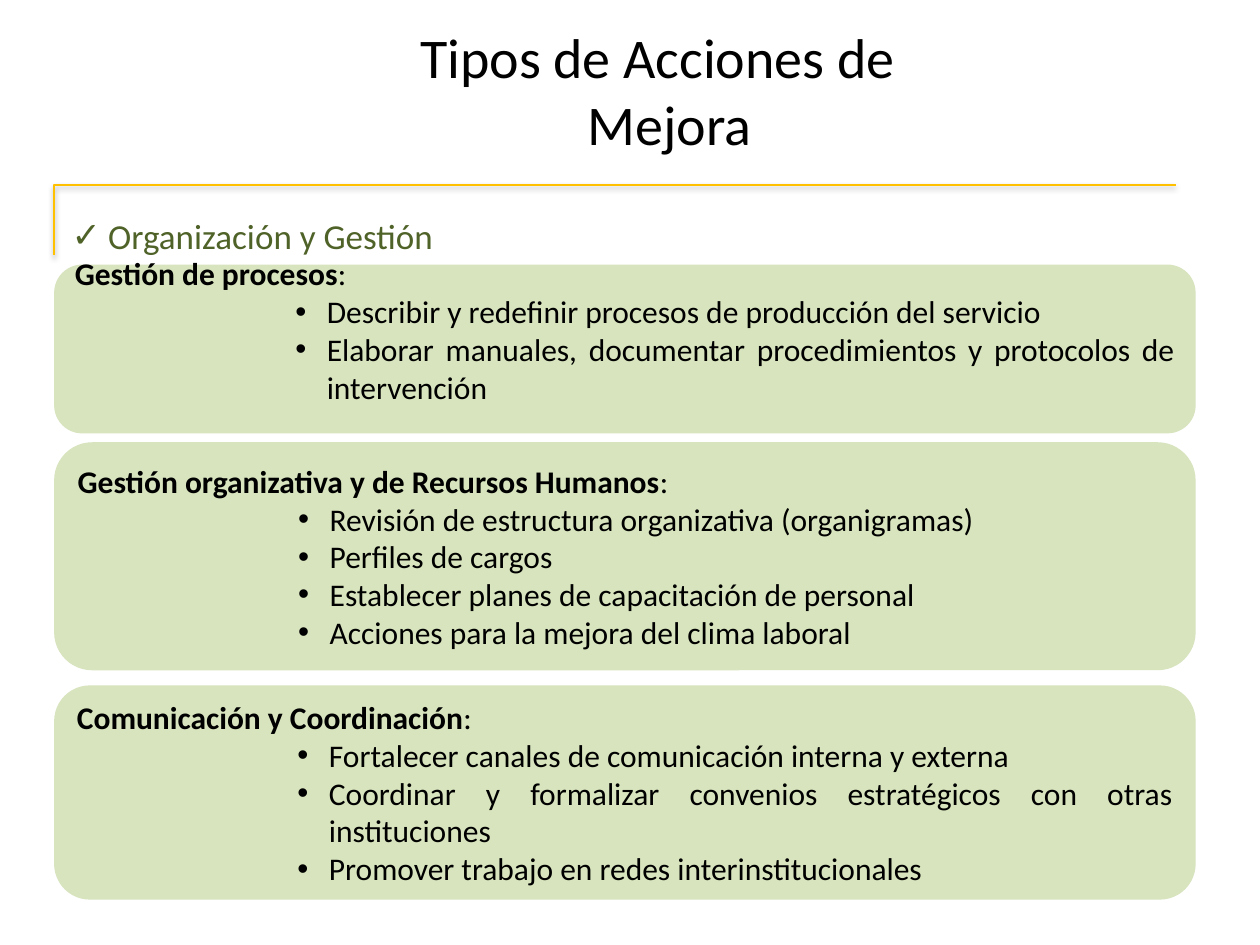
"""Build the slide on types of improvement actions."""
import pptx
import pptx.dml.color
import pptx.enum.shapes
import pptx.enum.text
import pptx.oxml
import pptx.util
import lxml.etree

inch = pptx.util.Inches
pt = pptx.util.Pt
align = pptx.enum.text.PP_ALIGN
anchor = pptx.enum.text.MSO_ANCHOR
NS = "http://schemas.openxmlformats.org/drawingml/2006/main"


def tint(code):
    return pptx.dml.color.RGBColor.from_string(code)


def style(para, size, code, side, left=0, hang=0, mark=None):
    para.alignment = side
    props = para._p.get_or_add_pPr()
    props.set("marL", str(inch(left)))
    props.set("indent", str(-inch(hang)))
    if mark:
        font = lxml.etree.SubElement(props, f"{{{NS}}}buFont")
        font.set("typeface", "Arial")
        lxml.etree.SubElement(props, f"{{{NS}}}buChar").set("char", mark)
    for run in para.runs:
        run.font.size = pt(size)
        run.font.name = "Calibri"
        run.font.color.rgb = tint(code)


deck = pptx.Presentation()
deck.slide_width, deck.slide_height = inch(10), inch(7.5)
slide = deck.slides.add_slide(deck.slide_layouts[5])
shapes = slide.shapes
left, wide = 0.43, 9.06

pen = shapes.build_freeform(inch(left), inch(2.02))
pen.add_line_segments([(inch(left), inch(1.47)), (inch(9.33), inch(1.47))], close=False)
rule = pen.convert_to_shape()
rule.fill.background()
rule.line.color.rgb = tint("FFC000")
rule.line.width = pt(1)
rule._element.spPr.append(pptx.oxml.parse_xml(
    f'<a:effectLst xmlns:a="{NS}">'
    f'<a:outerShdw blurRad="{pt(3.1)}" dist="{pt(1.6)}" dir="5400000" rotWithShape="0">'
    '<a:srgbClr val="000000"><a:alpha val="38000"/></a:srgbClr>'
    '</a:outerShdw></a:effectLst>'))

topic = shapes.add_textbox(inch(0.47), inch(1.65), inch(9.3), inch(5.17))
topic.text_frame.word_wrap = True
topic.text_frame.text = "Organización y Gestión"
para = topic.text_frame.paragraphs[0]
para.space_after = pt(6)
style(para, 20, "4F6228", align.JUSTIFY, 0.29, 0.29, "✓")

cards = [
    (2.1, 1.34, 0.35, "Gestión de procesos", [
        "Describir y redefinir procesos de producción del servicio",
        "Elaborar manuales, documentar procedimientos y protocolos de intervención"]),
    (3.51, 1.81, 0.05, "Gestión organizativa y de Recursos Humanos", [
        "Revisión de estructura organizativa (organigramas)",
        "Perfiles de cargos",
        "Establecer planes de capacitación de personal",
        "Acciones para la mejora del clima laboral"]),
    (5.44, 1.7, 0.05, "Comunicación y Coordinación", [
        "Fortalecer canales de comunicación interna y externa",
        "Coordinar y formalizar convenios estratégicos con otras instituciones",
        "Promover trabajo en redes interinstitucionales"]),
]
kind = pptx.enum.shapes.MSO_SHAPE.ROUNDED_RECTANGLE
for top, high, foot, head, items in cards:
    card = shapes.add_shape(kind, inch(left), inch(top), inch(wide), inch(high))
    card.shadow.inherit = False
    card.fill.solid()
    card.fill.fore_color.rgb = tint("D7E4BD")
    card.line.fill.background()
    frame = card.text_frame
    frame.word_wrap = True
    frame.vertical_anchor = anchor.MIDDLE
    frame.margin_bottom = inch(foot)
    frame.text = head
    para = frame.paragraphs[0]
    para.runs[0].font.bold = True
    para.add_run().text = ": "
    style(para, 18, "000000", align.JUSTIFY)
    for item in items:
        para = frame.add_paragraph()
        para.text = item
        para.level = 4
        style(para, 18, "000000", align.JUSTIFY, 2, 0.25, "•")

title = shapes.title
title.left, title.top = inch(2.72), inch(0.13)
title.width, title.height = inch(5), inch(1.18)
frame = title.text_frame
frame.word_wrap = True
frame.auto_size = pptx.enum.text.MSO_AUTO_SIZE.SHAPE_TO_FIT_TEXT
frame.vertical_anchor = anchor.TOP
frame.text = "Tipos de Acciones de Mejora "
frame.paragraphs[0].space_after = pt(6)
style(frame.paragraphs[0], 32, "000000", align.CENTER, 0.29, 0.29)

deck.save("out.pptx")
